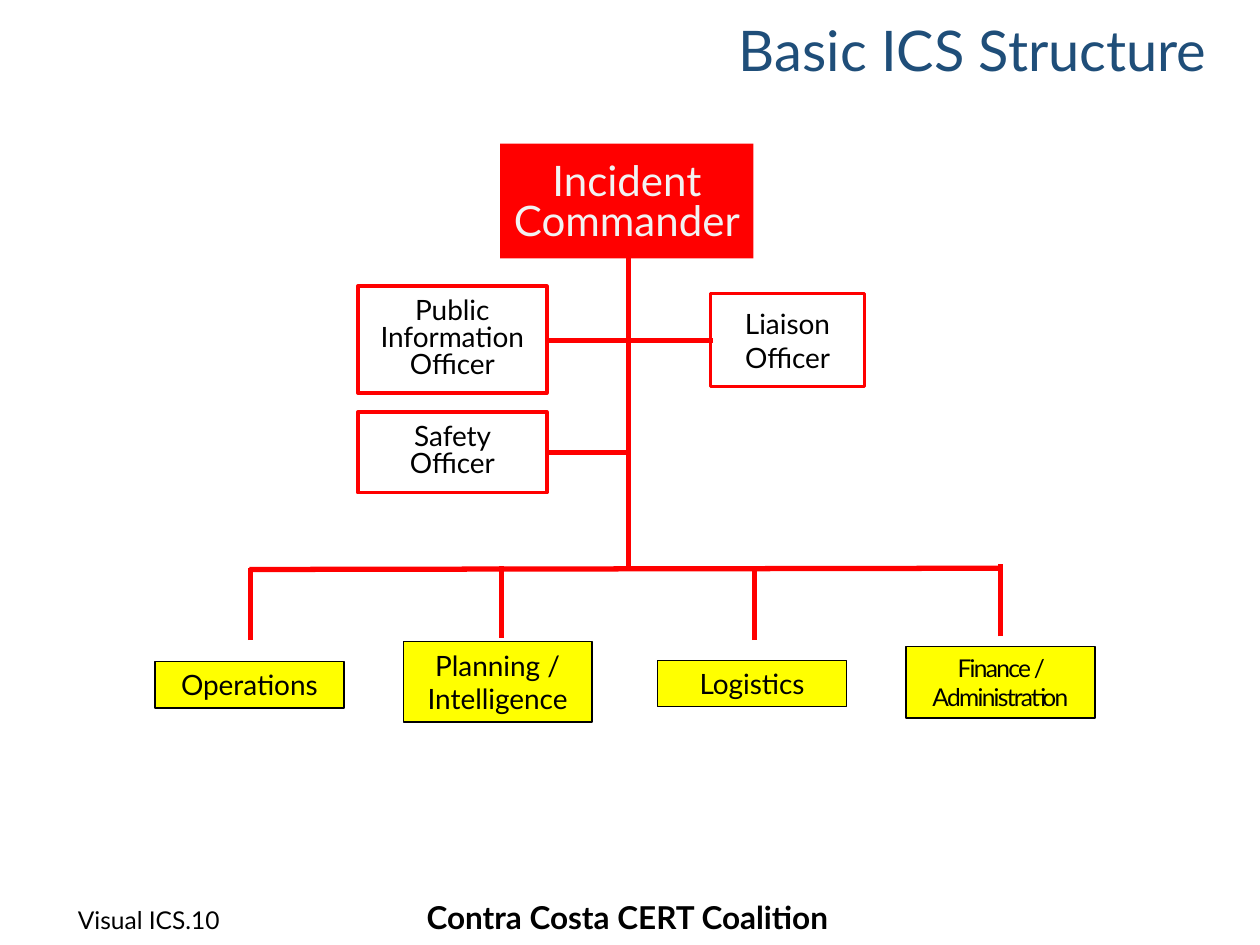
from lxml.etree import SubElement
from pptx import Presentation
from pptx.dml.color import RGBColor
from pptx.enum.shapes import MSO_CONNECTOR, MSO_SHAPE
from pptx.enum.text import MSO_ANCHOR, PP_ALIGN
from pptx.oxml.ns import qn
from pptx.util import Inches, Pt

RED, YELLOW, WHITE, BLACK = "FF0000", "FFFF00", "FFFFFF", "000000"


def color(code):
    """Turn a hex string into a colour."""
    return RGBColor.from_string(code)


def write(shape, text, size, ink=BLACK, align=PP_ALIGN.CENTER, bold=False,
          spacing=None, anchor=MSO_ANCHOR.MIDDLE):
    """Put one styled paragraph into a shape."""
    frame = shape.text_frame
    frame.word_wrap = True
    frame.vertical_anchor = anchor
    frame.text = text
    para = frame.paragraphs[0]
    para.alignment = align
    if spacing:
        para.line_spacing = spacing
    font = para.font
    font.name, font.size, font.bold = "Lato", Pt(size), bold
    font.color.rgb = color(ink)
    return frame


def add_box(slide, box, text, fill, line, width, size=16, ink=BLACK,
            spacing=None, top=0.05, bottom=0.05):
    """Add a labelled box of the chart."""
    shape = slide.shapes.add_shape(MSO_SHAPE.RECTANGLE, *map(Inches, box))
    shape.shadow.inherit = False
    shape.fill.solid()
    shape.fill.fore_color.rgb = color(fill)
    if line:
        shape.line.color.rgb = color(line)
        shape.line.width = Pt(width)
    else:
        shape.line.fill.background()
    frame = write(shape, text, size, ink, spacing=spacing)
    frame.margin_top, frame.margin_bottom = Inches(top), Inches(bottom)
    return shape


def add_line(slide, x1, y1, x2, y2):
    """Add a red line of the chart."""
    line = slide.shapes.add_connector(
        MSO_CONNECTOR.STRAIGHT, *map(Inches, (x1, y1, x2, y2)))
    line.line.color.rgb = color(RED)
    line.line.width = Pt(3)
    SubElement(line._element.spPr, qn("a:effectLst"))


def add_command(slide, x, y):
    """Add the commander and the staff officers."""
    add_box(slide, (x + 1.13, y, 2.01, 0.91), "Incident Commander", RED, None, 0,
            24, "F2F2F2", 0.8, 0.15, 0.1)
    for left, top, width, height, text, spacing in (
            (0, 1.13, 1.5, 0.85, "Public Information Officer", 0.8),
            (0, 2.13, 1.5, 0.64, "Safety Officer", 0.8),
            (2.8, 1.19, 1.22, 0.74, "Liaison Officer", None)):
        add_box(slide, (x + left, y + top, width, height), text, WHITE, RED, 2,
                spacing=spacing, top=0.1, bottom=0.1)


def add_sections(slide, x, y):
    """Add the row of four sections."""
    for left, top, height, text, size in (
            (0, 0.16, 0.37, "Operations", 16),
            (1.97, 0, 0.64, "Planning / Intelligence", 16),
            (3.99, 0.15, 0.37, "Logistics", 16),
            (5.96, 0.04, 0.57, "Finance / Administration", 14)):
        shape = add_box(slide, (x + left, y + top, 1.5, height), text,
                        YELLOW, BLACK, 0.75, size)
        if size == 14:
            run = shape.text_frame.paragraphs[0].runs[0]
            run.font._element.set("spc", "-100")


def add_lines(slide, x, y):
    """Join the boxes, from the left end of the crossbar."""
    add_line(slide, x, y + 0.01, x + 5.96, y)
    add_line(slide, x + 3.01, y, x + 3.01, y - 2.61)
    add_line(slide, x + 2.38, y - 1.81, x + 3.68, y - 1.81)
    add_line(slide, x + 2.38, y - 0.92, x + 3, y - 0.92)
    for left, top in ((0.01, 0), (2, -0.02), (4.01, 0), (5.96, -0.03)):
        add_line(slide, x + left, y + top + 0.57, x + left, y + top)


def add_title(slide, box):
    """Place and format the title."""
    title = slide.shapes.title
    title.left, title.top, title.width, title.height = map(Inches, box)
    write(title, "Basic ICS Structure", 32, "1F4E79", PP_ALIGN.RIGHT, spacing=0.9)


def add_footer(slide, x, y):
    """Add the group name and the slide mark."""
    name = slide.shapes.add_textbox(*map(Inches, (x + 2.64, y, 3.64, 0.3)))
    frame = write(name, "Contra Costa CERT Coalition", 18, bold=True,
                  anchor=MSO_ANCHOR.TOP)
    frame.word_wrap = False
    frame.margin_top = frame.margin_bottom = 0
    mark = slide.shapes.add_textbox(*map(Inches, (x, y, 1.64, 0.34)))
    write(mark, "Visual ICS.10", 14, align=PP_ALIGN.LEFT, anchor=MSO_ANCHOR.TOP)


def main():
    """Build the slide and save it."""
    deck = Presentation()
    deck.slide_width, deck.slide_height = Inches(10), Inches(7.5)
    slide = deck.slides.add_slide(deck.slide_layouts[5])
    add_footer(slide, 0.52, 7.13)
    add_command(slide, 2.84, 1.14)
    add_sections(slide, 1.23, 5.09)
    add_lines(slide, 1.98, 4.51)
    add_title(slide, (1.09, 0.13, 8.59, 0.59))
    deck.save("out.pptx")


if __name__ == "__main__":
    main()
